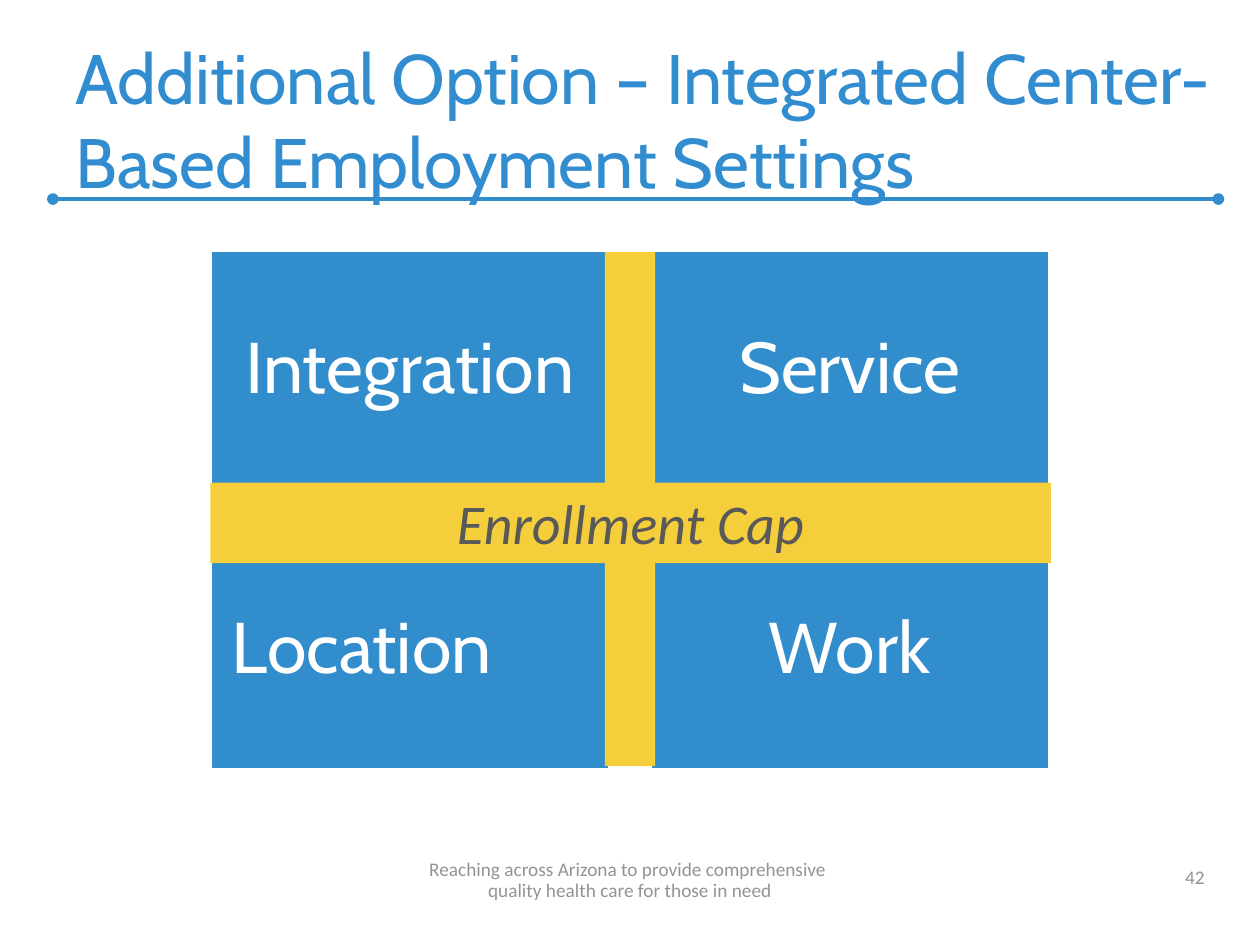
import pptx
import pptx.util
import pptx.dml.color
import pptx.enum.shapes
import pptx.enum.text
import pptx.oxml
import pptx.oxml.ns

Inches = pptx.util.Inches
Pt = pptx.util.Pt
ALIGN = pptx.enum.text.PP_ALIGN
ANCHOR = pptx.enum.text.MSO_ANCHOR
RECTANGLE = pptx.enum.shapes.MSO_SHAPE.RECTANGLE
BLUE, YELLOW, GREY = "318DCC", "F5CE3B", "939393"


def color(value):
    return pptx.dml.color.RGBColor.from_string(value)


def write(shape, text, ink, anchor, align, line_spacing=None, **font):
    frame = shape.text_frame
    frame.word_wrap = True
    frame.vertical_anchor = anchor
    frame.text = text
    paragraph = frame.paragraphs[0]
    paragraph.alignment = align
    paragraph.line_spacing = line_spacing
    for run in paragraph.runs:
        run.font.color.rgb = color(ink)
        for attribute, value in font.items():
            setattr(run.font, attribute, value)


deck = pptx.Presentation()
deck.slide_width, deck.slide_height = Inches(10), Inches(7.5)
slide = deck.slides.add_slide(deck.slide_layouts[6])
shapes = slide.shapes

# Rule under the title, with round ends
rule = shapes.add_connector(pptx.enum.shapes.MSO_CONNECTOR.STRAIGHT,
                            Inches(0.42), Inches(1.58), Inches(9.67), Inches(1.58))
rule.line.color.rgb = color(BLUE)
rule.line.width = Pt(2.25)
rule_line = rule.line._get_or_add_ln()
for end in ("a:headEnd", "a:tailEnd"):
    pptx.oxml.ns.qn(end)
    rule_line.append(pptx.oxml.parse_xml(
        f'<{end} {pptx.oxml.ns.nsdecls("a")} type="oval"/>'))
rule._element.spPr.append(pptx.oxml.parse_xml(
    f'<a:effectLst {pptx.oxml.ns.nsdecls("a")}/>'))

# Title, footer and page number
small = dict(size=Pt(11), name="Calibri")
captions = [
    ((0.5, 0.33, 9.42, 1.33),
     "Additional Option – Integrated Center-Based Employment Settings",
     "318DCF", ALIGN.LEFT, None, dict(size=Pt(40), name="Cabin")),
    ((0, 6.78, 10, 0.42),
     "Reaching across Arizona to provide comprehensive \vquality health care for those in need",
     GREY, ALIGN.CENTER, Pt(12), small),
    ((7.33, 6.78, 2.33, 0.32), "42", GREY, ALIGN.RIGHT, None, small),
]
for place, text, ink, align, spacing, font in captions:
    box = shapes.add_textbox(*map(Inches, place))
    write(box, text, ink, ANCHOR.BOTTOM, align, spacing, **font)

# Four aspects on a two by two grid
LEFT, TOP, TILE_W, TILE_H = 1.67, 1.99, 3.17, 1.9
COLUMN_STEP, ROW_STEP = 3.49, 2.22
aspects = [("Integration", ALIGN.CENTER), ("Service", ALIGN.CENTER),
           ("Location", ALIGN.LEFT), ("Work", ALIGN.CENTER)]
for index, (aspect, align) in enumerate(aspects):
    row, column = divmod(index, 2)
    tile = shapes.add_shape(RECTANGLE, Inches(LEFT + column * COLUMN_STEP),
                            Inches(TOP + row * ROW_STEP), Inches(TILE_W), Inches(TILE_H))
    tile.shadow.inherit = False
    tile.fill.solid()
    tile.fill.fore_color.rgb = color(BLUE)
    tile.line.color.rgb = color("FFFFFF")
    tile.line.width = Pt(2)
    for side in ("left", "top", "right", "bottom"):
        setattr(tile.text_frame, f"margin_{side}", Inches(0.17))
    write(tile, aspect, "FFFFFF", ANCHOR.MIDDLE, align, 0.9, size=Pt(41), name="Cabin")

# Yellow cross between the tiles, the last bar carrying the cap
for place in ((4.8, 2, 0.4, 4.08), (1.67, 3.83, 6.67, 0.64)):
    bar = shapes.add_shape(RECTANGLE, *map(Inches, place))
    bar.shadow.inherit = False
    bar.fill.solid()
    bar.fill.fore_color.rgb = color(YELLOW)
    bar.line.fill.background()
write(bar, "Enrollment Cap", "595959", ANCHOR.TOP, ALIGN.CENTER,
      size=Pt(32), name="Calibri", italic=True)

deck.save("out.pptx")
